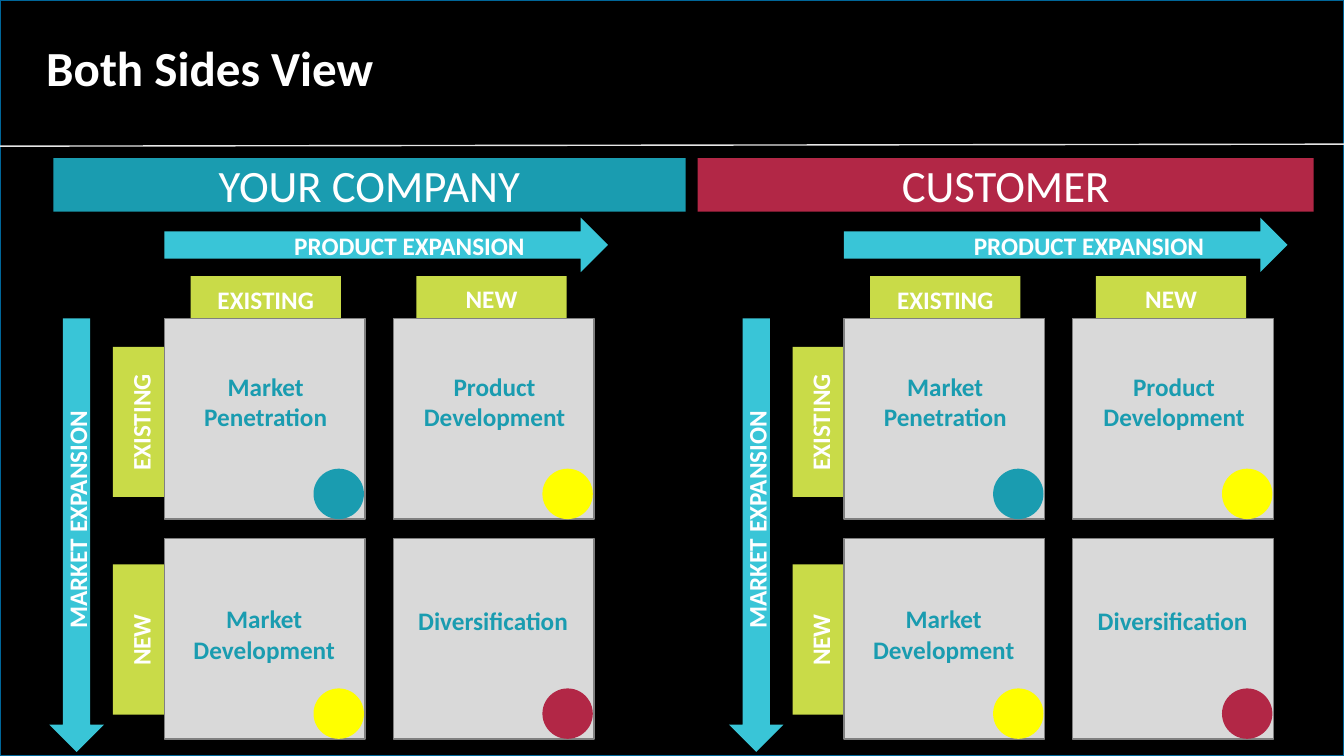
from dataclasses import dataclass

from lxml.etree import SubElement
from pptx import Presentation
from pptx.dml.color import RGBColor
from pptx.enum.shapes import MSO_CONNECTOR, MSO_SHAPE
from pptx.enum.text import MSO_AUTO_SIZE, PP_ALIGN
from pptx.oxml.ns import qn
from pptx.util import Inches, Pt


@dataclass(frozen=True)
class Theme:
    font: str = "Calibri"
    title_size: int = 35
    banner_size: int = 32
    label_size: int = 18
    black: str = "000000"
    white: str = "FFFFFF"
    frame: str = "006699"
    rule: str = "E6E6E6"
    teal: str = "1A9CB0"
    crimson: str = "B22746"
    cyan: str = "39C5D7"
    lime: str = "C9DB48"
    yellow: str = "FFFF00"
    panel: str = "D9D9D9"
    panel_edge: str = "808080"


class SlideBuilder:
    def __init__(self, page, theme):
        self.page = page
        self.theme = theme
        self.shapes = page.shapes

    def shape(self, kind, left, top, width, height, fill, line=None, rotation=0):
        shape = self.shapes.add_shape(
            kind, Inches(left), Inches(top), Inches(width), Inches(height))
        shape.shadow.inherit = False
        shape.rotation = rotation
        shape.fill.solid()
        shape.fill.fore_color.rgb = RGBColor.from_string(fill)
        if line:
            shape.line.color.rgb = RGBColor.from_string(line)
            shape.line.width = Pt(1)
        else:
            shape.line.fill.background()

    def text(self, words, left, top, width, height, size=None, color=None,
             bold=True, align=PP_ALIGN.CENTER, rotation=0, spacing=None):
        box = self.shapes.add_textbox(
            Inches(left), Inches(top), Inches(width), Inches(height))
        box.rotation = rotation
        frame = box.text_frame
        frame.word_wrap = True
        frame.auto_size = MSO_AUTO_SIZE.SHAPE_TO_FIT_TEXT
        frame.text = words
        para = frame.paragraphs[0]
        para.alignment = align
        para.line_spacing = spacing
        font = para.runs[0].font
        font.name = self.theme.font
        font.size = Pt(size or self.theme.label_size)
        font.bold = bold
        font.color.rgb = RGBColor.from_string(color or self.theme.white)

    def rule(self, x1, y1, x2, y2):
        rule = self.shapes.add_connector(
            MSO_CONNECTOR.STRAIGHT, Inches(x1), Inches(y1), Inches(x2), Inches(y2))
        rule.line.color.rgb = RGBColor.from_string(self.theme.rule)
        rule.line.width = Pt(1)
        SubElement(rule._element.spPr, qn("a:effectLst"))

    def matrix(self, x):
        theme = self.theme
        columns, rows = (x + 1.63, x + 3.9), (3.16, 5.34)
        column_tabs = (("EXISTING", x + 1.89, 2.77), ("NEW", x + 4.13, 2.76))
        row_tabs = (("EXISTING", 3.81), ("NEW", 5.97))
        cells = (
            ("Market Penetration", 0, 0, theme.teal, 1.89, 3.63, 1.49, 0.64),
            ("Product Development", 1, 0, theme.yellow, 4.09, 3.63, 1.63, 0.71),
            ("Market Development", 0, 1, theme.yellow, 1.74, 5.94, 1.76, 0.71),
            ("Diversification", 1, 1, theme.crimson, 3.98, 5.96, 1.82, 0.4),
        )
        self.shapes = self.page.shapes.add_group_shape().shapes
        self.shape(MSO_SHAPE.RIGHT_ARROW, x + 1.63, 2.16, 4.4, 0.54, theme.cyan)
        for name, top in row_tabs:
            self.shape(MSO_SHAPE.RECTANGLE, x + 0.75, top, 1.49, 0.75,
                       theme.lime, rotation=90)
        for name, left, top in column_tabs:
            self.shape(MSO_SHAPE.RECTANGLE, left, 2.74, 1.49, 0.75, theme.lime)
        for top in rows:
            for left in columns:
                self.shape(MSO_SHAPE.RECTANGLE, left, top, 1.99, 1.99,
                           theme.panel, theme.panel_edge)
        self.shape(MSO_SHAPE.RIGHT_ARROW, x - 1.39, 5.04, 4.3, 0.54,
                   theme.cyan, rotation=90)
        for name, column, row, status, *area in cells:
            self.shape(MSO_SHAPE.OVAL, columns[column] + 1.48, rows[row] + 1.49,
                       0.5, 0.5, status)
        self.text("PRODUCT EXPANSION", x + 2.82, 2.24, 3.37, 0.36,
                  align=PP_ALIGN.LEFT)
        self.text("MARKET EXPANSION", x - 0.94, 4.47, 3.37, 0.36,
                  align=PP_ALIGN.LEFT, rotation=270)
        for name, left, top in column_tabs:
            self.text(name, left, top, 1.49, 0.36)
        for name, top in row_tabs:
            self.text(name, x + 0.63, top + 0.2, 1.49, 0.36, rotation=270)
        for name, column, row, status, left, top, width, height in cells:
            self.text(name, x + left, top, width, height, color=theme.teal)
        self.shapes = self.page.shapes


def main():
    deck = Presentation()
    deck.slide_width = Inches(13.33)
    deck.slide_height = Inches(7.5)
    page = deck.slides.add_slide(deck.slide_layouts[6])
    theme = Theme()
    builder = SlideBuilder(page, theme)
    banners = (
        ("YOUR COMPANY", 0.53, 6.27, theme.teal),
        ("CUSTOMER", 6.92, 6.11, theme.crimson),
    )

    builder.shape(MSO_SHAPE.RECTANGLE, 0, 0, 13.33, 7.5, theme.black, theme.frame)
    builder.rule(13.33, 1.43, 0, 1.45)
    builder.text("Both Sides View", 0.36, 0.39, 12.62, 0.45,
                 size=theme.title_size, align=PP_ALIGN.LEFT, spacing=0.9)
    for name, left, width, fill in banners:
        builder.shape(MSO_SHAPE.RECTANGLE, left, 1.57, width, 0.53, fill)
    for offset in (0, 6.74):
        builder.matrix(offset)
    for name, left, width, fill in banners:
        builder.text(name, left, 1.52, width, 0.64,
                     size=theme.banner_size, bold=False)
    deck.save("out.pptx")


if __name__ == "__main__":
    main()
